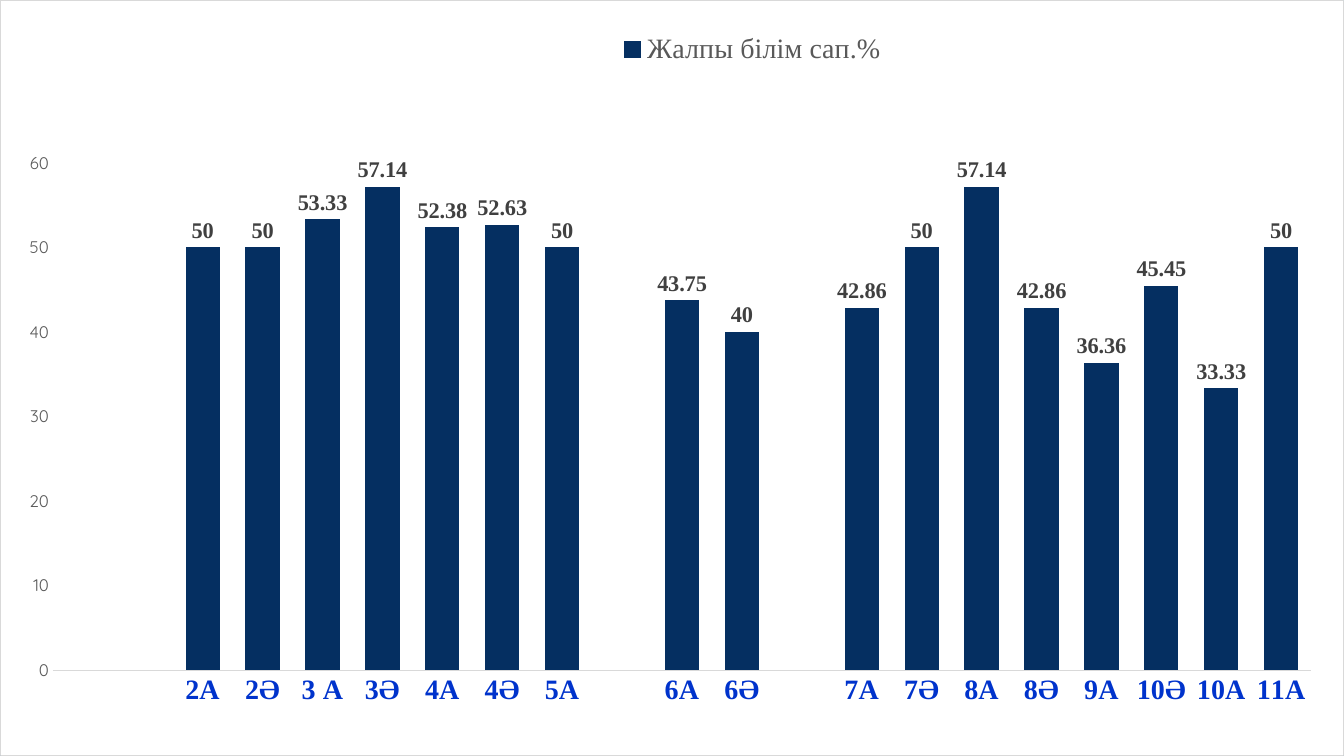
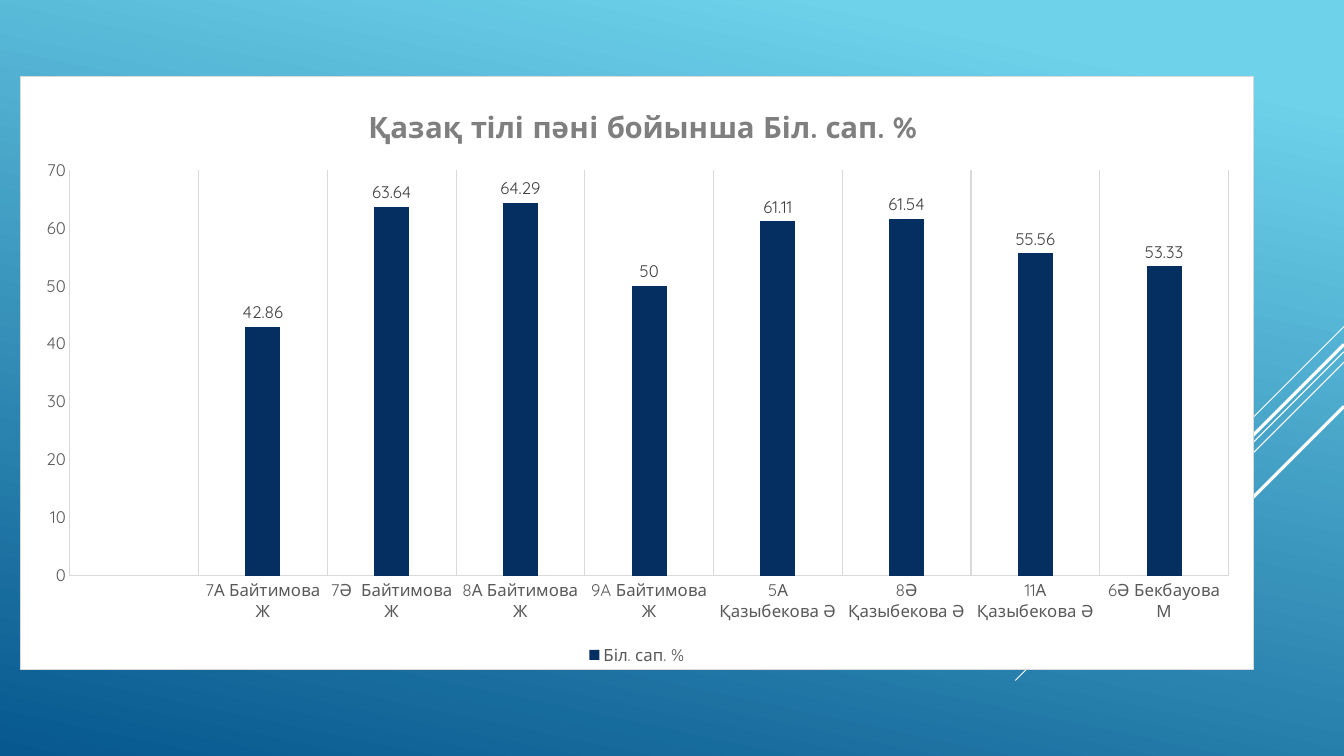
"""Build two slides of school results as column charts."""
from lxml import etree
from pptx import Presentation
from pptx import util as u
from pptx.chart.data import CategoryChartData
from pptx.dml.color import RGBColor
from pptx.enum import chart as charts
from pptx.enum import shapes
from pptx.oxml import ns, parse_xml

PX = 9525
WIDTH, HEIGHT = 1280, 720
COLOURS = {
    "sky": "6ED2EB", "deep": "06588E", "white": "FFFFFF", "bar": "052F61",
    "rule": "D9D9D9", "grey": "595959", "label": "404040", "title": "7F7F7F",
    "class": "0033CC",
}
SANS, SERIF = "Quicksand", "Times New Roman"
STRIPES = [(311, 96, 0.75), (335, 313, 0.75), (345, 199, 0.75),
           (328, 183, 2.25), (387, 133, 2.25)]
SMALL = {"name": SANS, "size": 12, "bold": False, "colour": "grey"}

CLASSES = {
    "name": "Жалпы білім сап.%",
    "points": [("", None), ("", None), ("2А", 50), ("2Ә", 50), ("3 А", 53.33),
               ("3Ә", 57.14), ("4А", 52.38), ("4Ә", 52.63), ("5А", 50),
               ("", None), ("6А", 43.75), ("6Ә", 40), ("", None),
               ("7А", 42.86), ("7Ә", 50), ("8А", 57.14), ("8Ә", 42.86),
               ("9A", 36.36), ("10Ә", 45.45), ("10A", 33.33), ("11А", 50)],
    "box": (0, 0, WIDTH, HEIGHT),
    "plot": (0.039, 0.215, 0.937, 0.672),
    "legend": (0.455, 0.03, 0.21, 0.07),
    "bars": {"gap_width": 75},
    "top": 60,
    "category_font": {"name": SERIF, "size": 20, "bold": True, "colour": "class"},
    "legend_font": {"name": SERIF, "size": 20, "bold": False, "colour": "grey"},
    "label_font": {"name": SERIF, "size": 16, "bold": True, "colour": "label"},
}
KAZAKH = {
    "name": "Біл. сап. %",
    "title": "Қазақ тілі пәні бойынша Біл. сап. %",
    "points": [("", None), ("7А Байтимова Ж", 42.86), ("7Ә  Байтимова Ж", 63.64),
               ("8А Байтимова Ж", 64.29), ("9A Байтимова Ж", 50),
               ("5А Қазыбекова Ә", 61.11), ("8Ә Қазыбекова Ә", 61.54),
               ("11А Қазыбекова Ә", 55.56), ("6Ә Бекбауова М", 53.33)],
    "box": (19, 72, 1175, 566),
    "plot": (0.04, 0.158, 0.94, 0.684),
    "bars": {"gap_width": 267, "overlap": -43},
    "top": 70,
    "grid": True,
    "category_font": SMALL,
    "legend_font": SMALL,
    "label_font": {**SMALL, "colour": "label"},
}


def px(*lengths):
    """Turn lengths in px into EMU."""
    return [length * PX for length in lengths]


def colour(name):
    """Look up a named colour."""
    return RGBColor.from_string(COLOURS[name])


def apply(target, values):
    """Set every attribute named in a dict of values."""
    for name, value in values.items():
        setattr(target, name, value)


def set_font(font, values):
    """Apply a font format given with its size in points and a colour name."""
    apply(font, {"name": values["name"], "size": u.Pt(values["size"]),
                 "bold": values["bold"]})
    font.color.rgb = colour(values["colour"])


def set_line(line, name, points):
    """Give a line a colour and a width in points."""
    line.color.rgb = colour(name)
    line.width = u.Pt(points)


def add_backdrop(page):
    """Fill the page with the gradient and draw the diagonal stripes."""
    fill = page.background.fill
    fill.gradient()
    fill.gradient_angle = 258
    for stop, name, position in zip(fill.gradient_stops, ("sky", "deep"), (0.1, 1)):
        stop.color.rgb = colour(name)
        stop.position = position
    for top, run, points in STRIPES:
        stripe = page.shapes.add_connector(
            shapes.MSO_CONNECTOR.STRAIGHT, *px(WIDTH, top, WIDTH - run, top + run))
        set_line(stripe.line, "white", points)
        etree.SubElement(stripe._element.spPr, ns.qn("a:effectLst"))


def set_layout(element, index, sides, inner=False):
    """Place a chart part by fractions of the chart's size."""
    for old in element.findall(ns.qn("c:layout")):
        element.remove(old)
    layout = etree.Element(ns.qn("c:layout"))
    manual = etree.SubElement(layout, ns.qn("c:manualLayout"))
    settings = [("layoutTarget", "inner")] if inner else []
    settings += [("xMode", "edge"), ("yMode", "edge"), *zip("xywh", sides)]
    for tag, value in settings:
        etree.SubElement(manual, ns.qn(f"c:{tag}")).set("val", str(value))
    element.insert(index, layout)


def set_frame(chart):
    """Give the chart area a white fill and a thin border."""
    frame = parse_xml(
        f'<c:spPr {ns.nsdecls("c", "a")}><a:solidFill>'
        f'<a:srgbClr val="{COLOURS["white"]}"/></a:solidFill>'
        f'<a:ln w="{PX}"><a:solidFill><a:srgbClr val="{COLOURS["rule"]}"/>'
        '</a:solidFill></a:ln></c:spPr>')
    chart.element.find(ns.qn("c:chart")).addnext(frame)


def set_axes(chart, content):
    """Format both axes and the category grid."""
    categories, values = chart.category_axis, chart.value_axis
    for axis, font in ((categories, content["category_font"]), (values, SMALL)):
        apply(axis, {"major_tick_mark": charts.XL_TICK_MARK.NONE,
                     "minor_tick_mark": charts.XL_TICK_MARK.NONE,
                     "has_major_gridlines": False})
        set_font(axis.tick_labels.font, font)
    set_line(categories.format.line, "rule", 0.75)
    if content.get("grid"):
        set_line(categories.major_gridlines.format.line, "rule", 0.75)
        categories.has_major_gridlines = True
    apply(values, {"minimum_scale": 0, "maximum_scale": content["top"],
                   "major_unit": 10})
    values.format.line.fill.background()


def set_title(chart, title):
    """Write the chart title, or leave it out."""
    chart.has_title = bool(title)
    if title:
        frame = chart.chart_title.text_frame
        frame.text = title
        span = frame.paragraphs[0].runs[0]
        set_font(span.font, {"name": SANS, "size": 21, "bold": True,
                             "colour": "title"})
        set_layout(chart.element.xpath("c:chart/c:title")[0], 1, (0.278, 0.04))


def set_legend(chart, content):
    """Show the legend, at its own place if one is given."""
    chart.has_legend = True
    apply(chart.legend, {"position": charts.XL_LEGEND_POSITION.BOTTOM,
                         "include_in_layout": False})
    set_font(chart.legend.font, content["legend_font"])
    if "legend" in content:
        set_layout(chart.element.xpath("c:chart/c:legend")[0], 1, content["legend"])


def add_columns(page, content):
    """Add a column chart with value labels."""
    data = CategoryChartData()
    data.categories, values = zip(*content["points"])
    data.add_series(content["name"], values)
    chart = page.shapes.add_chart(charts.XL_CHART_TYPE.COLUMN_CLUSTERED,
                                  *px(*content["box"]), data).chart
    set_font(chart.font, {**SMALL, "size": 10})
    set_frame(chart)
    set_title(chart, content.get("title"))
    set_legend(chart, content)
    set_axes(chart, content)
    plot = chart.plots[0]
    apply(plot, {"vary_by_categories": False, "has_data_labels": True,
                 **content["bars"]})
    apply(plot.data_labels, {"show_value": True,
                             "position": charts.XL_LABEL_POSITION.OUTSIDE_END})
    set_font(plot.data_labels.font, content["label_font"])
    fill = plot.series[0].format.fill
    fill.solid()
    fill.fore_color.rgb = colour("bar")
    set_layout(chart.element.xpath("c:chart/c:plotArea")[0], 0, content["plot"], True)


def main():
    """Build and save the deck."""
    deck = Presentation()
    deck.slide_width, deck.slide_height = px(WIDTH, HEIGHT)
    for content in (CLASSES, KAZAKH):
        page = deck.slides.add_slide(deck.slide_layouts[6])
        add_backdrop(page)
        add_columns(page, content)
    deck.save("out.pptx")


if __name__ == "__main__":
    main()
